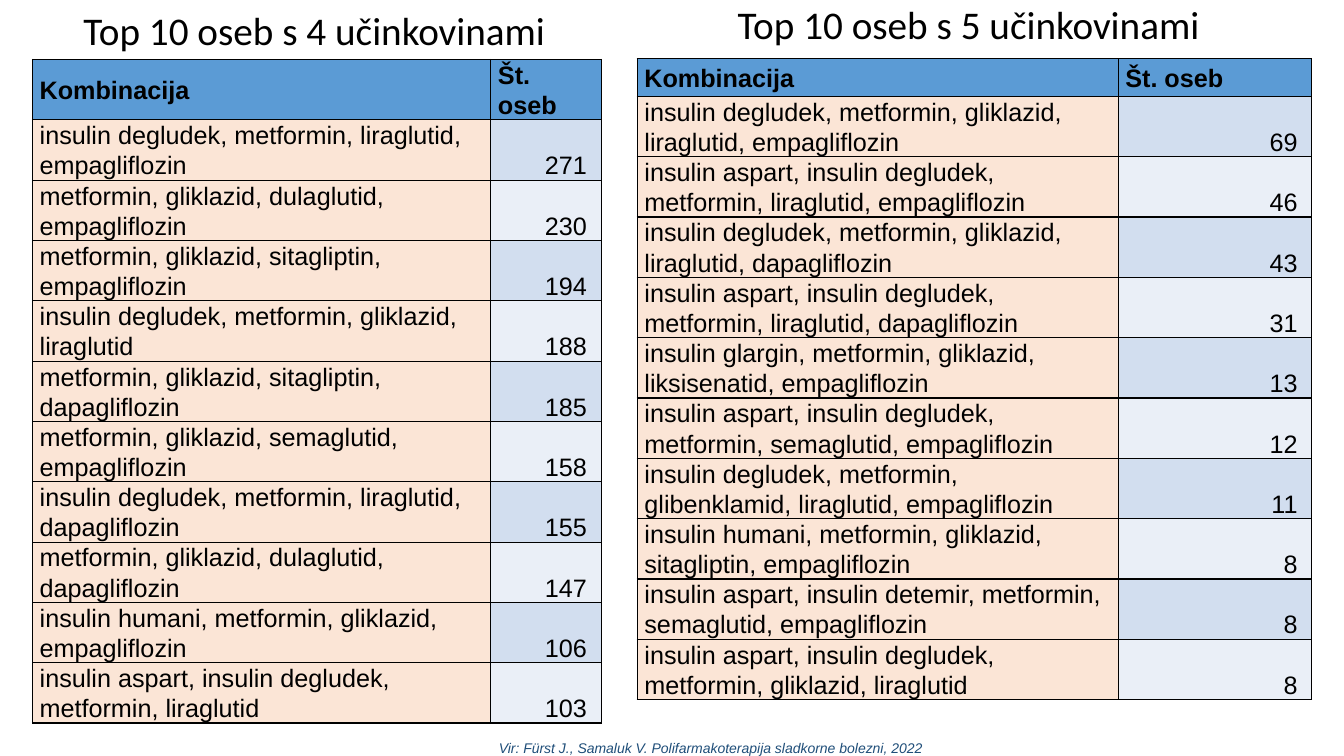
import dataclasses

import lxml.etree
import pptx
import pptx.dml.color
import pptx.enum.text
import pptx.oxml.ns
import pptx.util

Cm = pptx.util.Cm
Pt = pptx.util.Pt
Rgb = pptx.dml.color.RGBColor.from_string
Align = pptx.enum.text.PP_ALIGN
Anchor = pptx.enum.text.MSO_ANCHOR
qn = pptx.oxml.ns.qn


@dataclasses.dataclass(frozen=True)
class Theme:
    """Colours, fonts and type sizes of the slide."""
    ink: str = "000000"
    note: str = "1F4E79"
    head: str = "5B9BD5"
    drug: str = "FBE5D6"
    bands: tuple = ("D2DEEF", "EAEFF7")
    title_font: str = "Calibri"
    body_font: str = "Arial"
    title_size: int = 28
    body_size: int = 18
    body_line: float = 21.5
    note_size: int = 10


class Deck:
    """Draws styled elements on the current slide."""

    def __init__(self, theme):
        self.theme = theme
        self.file = pptx.Presentation()
        self.file.slide_width = Cm(33.87)
        self.file.slide_height = Cm(19.05)
        self.slide = self.file.slides.add_slide(self.file.slide_layouts[6])

    def run(self, para, text, font, size, color, bold=False, italic=False):
        """Add one styled run."""
        run = para.add_run()
        run.text = text
        run.font.name = font
        run.font.size = Pt(size)
        run.font.color.rgb = Rgb(color)
        run.font.bold = bold
        run.font.italic = italic

    def frame(self, left, top, width, height):
        """Add a wrapping text box and return its text frame."""
        box = self.slide.shapes.add_textbox(Cm(left), Cm(top), Cm(width), Cm(height))
        box.text_frame.word_wrap = True
        return box.text_frame

    def title(self, text, left, top, width, height):
        """Add a table title."""
        frame = self.frame(left, top, width, height)
        frame.vertical_anchor = Anchor.MIDDLE
        para = frame.paragraphs[0]
        para.line_spacing = 0.9
        self.run(para, text, self.theme.title_font, self.theme.title_size, self.theme.ink)

    def note(self, text, left, top, width, height):
        """Add the source line."""
        para = self.frame(left, top, width, height).paragraphs[0]
        self.run(para, text, self.theme.body_font, self.theme.note_size,
                 self.theme.note, italic=True)

    def border(self, cell):
        """Draw a thin line on all four sides of a cell."""
        props = cell._tc.get_or_add_tcPr()
        for spot, side in enumerate(("a:lnL", "a:lnR", "a:lnT", "a:lnB")):
            line = lxml.etree.Element(qn(side), w=str(Pt(1)))
            fill = lxml.etree.SubElement(line, qn("a:solidFill"))
            lxml.etree.SubElement(fill, qn("a:srgbClr"), val=self.theme.ink)
            props.insert(spot, line)

    def cell(self, cell, text, fill, head=False, count=False):
        """Fill one table cell."""
        cell.fill.solid()
        cell.fill.fore_color.rgb = Rgb(fill)
        self.border(cell)
        cell.margin_left = Cm(0.18)
        cell.margin_right = Cm(0.36 if count else 0.18)
        cell.margin_top = cell.margin_bottom = 0
        cell.vertical_anchor = Anchor.MIDDLE if head else Anchor.BOTTOM
        para = cell.text_frame.paragraphs[0]
        para.alignment = Align.RIGHT if count else Align.LEFT
        para.line_spacing = Pt(self.theme.body_line)
        para.space_before = para.space_after = Pt(0)
        self.run(para, text, self.theme.body_font, self.theme.body_size,
                 self.theme.ink, bold=head)

    def table(self, rows, left, top, widths, first, step):
        """Add a table of drug mixes and head counts."""
        height = first + step * len(rows)
        table = self.slide.shapes.add_table(
            len(rows) + 1, 2, Cm(left), Cm(top), Cm(sum(widths)), Cm(height)).table
        table.horz_banding = False
        for col, width in zip(table.columns, widths):
            col.width = Cm(width)
        for row in table.rows:
            row.height = Cm(step)
        table.rows[0].height = Cm(first)
        for col, text in enumerate(("Kombinacija", "Št. oseb")):
            self.cell(table.cell(0, col), text, self.theme.head, head=True)
        for row, (drugs, count) in enumerate(rows, 1):
            self.cell(table.cell(row, 0), drugs, self.theme.drug)
            band = self.theme.bands[(row - 1) % 2]
            self.cell(table.cell(row, 1), str(count), band, count=True)


FOUR = (
    ("insulin degludek, metformin, liraglutid, empagliflozin", 271),
    ("metformin, gliklazid, dulaglutid, empagliflozin", 230),
    ("metformin, gliklazid, sitagliptin, empagliflozin", 194),
    ("insulin degludek, metformin, gliklazid, liraglutid", 188),
    ("metformin, gliklazid, sitagliptin, dapagliflozin", 185),
    ("metformin, gliklazid, semaglutid, empagliflozin", 158),
    ("insulin degludek, metformin, liraglutid, dapagliflozin", 155),
    ("metformin, gliklazid, dulaglutid, dapagliflozin", 147),
    ("insulin humani, metformin, gliklazid, empagliflozin", 106),
    ("insulin aspart, insulin degludek, metformin, liraglutid", 103),
)
FIVE = (
    ("insulin degludek, metformin, gliklazid, liraglutid, empagliflozin", 69),
    ("insulin aspart, insulin degludek, metformin, liraglutid, empagliflozin", 46),
    ("insulin degludek, metformin, gliklazid, liraglutid, dapagliflozin", 43),
    ("insulin aspart, insulin degludek, metformin, liraglutid, dapagliflozin", 31),
    ("insulin glargin, metformin, gliklazid, liksisenatid, empagliflozin", 13),
    ("insulin aspart, insulin degludek, metformin, semaglutid, empagliflozin", 12),
    ("insulin degludek, metformin, glibenklamid, liraglutid, empagliflozin", 11),
    ("insulin humani, metformin, gliklazid, sitagliptin, empagliflozin", 8),
    ("insulin aspart, insulin detemir, metformin, semaglutid, empagliflozin", 8),
    ("insulin aspart, insulin degludek, metformin, gliklazid, liraglutid", 8),
)


def main():
    """Build and save the slide."""
    deck = Deck(Theme())
    deck.title("Top 10 oseb s 4 učinkovinami", 1.85, 0.4, 12.27, 0.85)
    deck.table(FOUR, 0.82, 1.5, (11.55, 2.78), 1.52, 1.52)
    deck.title("Top 10 oseb s 5 učinkovinami", 18.34, 0.02, 12.98, 1.32)
    deck.table(FIVE, 16.06, 1.48, (12.12, 4.88), 0.95, 1.52)
    deck.note("Vir: Fürst J., Samaluk V. Polifarmakoterapija sladkorne bolezni, 2022",
              12.32, 18.52, 19.94, 0.68)
    deck.file.save("out.pptx")


if __name__ == "__main__":
    main()
